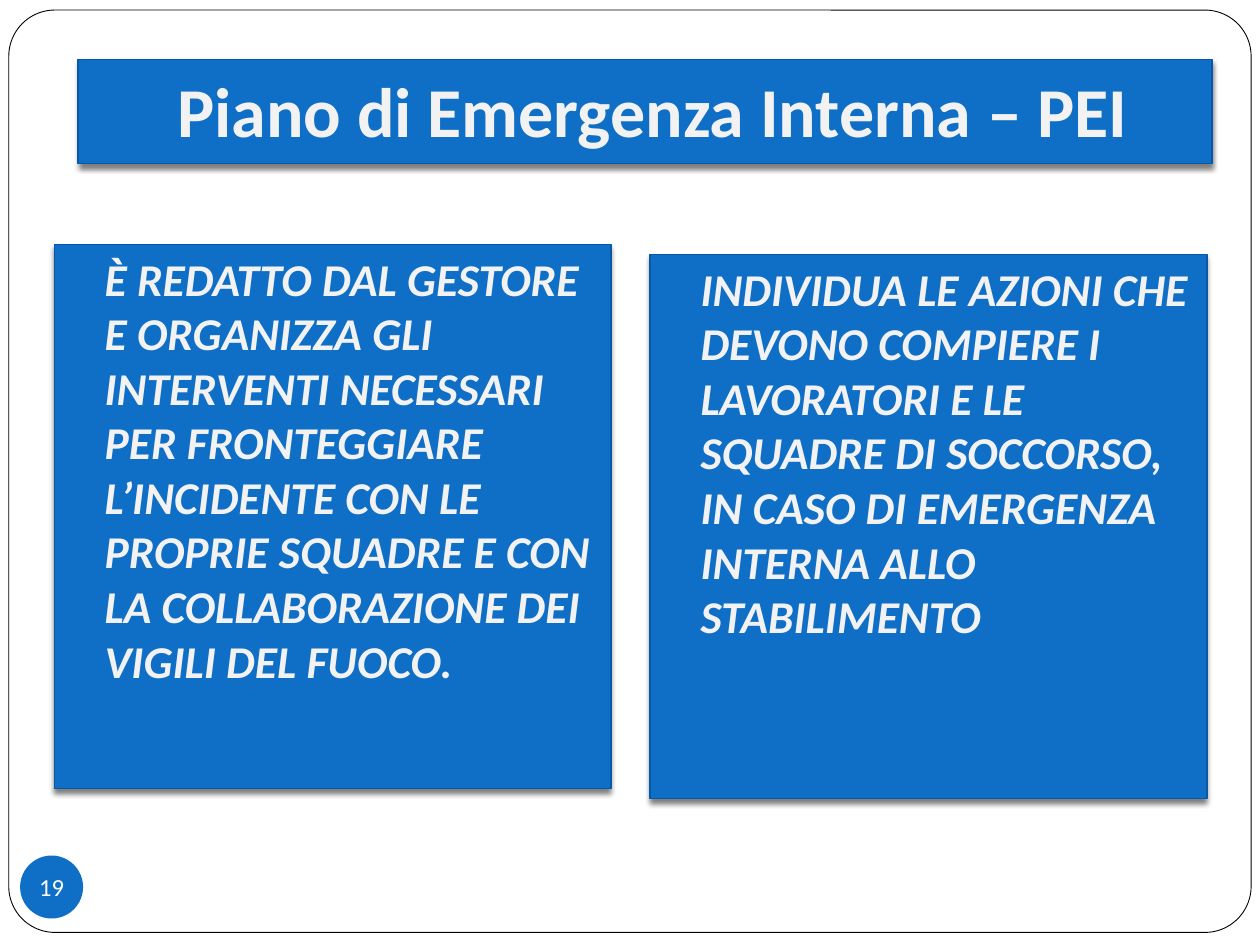
from lxml import etree
from pptx import Presentation
from pptx.dml.color import RGBColor
from pptx.enum.shapes import MSO_SHAPE
from pptx.enum.text import MSO_ANCHOR, PP_ALIGN
from pptx.oxml.ns import qn
from pptx.util import Inches, Pt

RECTANGLE, ROUNDED, OVAL = MSO_SHAPE.RECTANGLE, MSO_SHAPE.ROUNDED_RECTANGLE, MSO_SHAPE.OVAL
TOP, MIDDLE, BOTTOM = MSO_ANCHOR.TOP, MSO_ANCHOR.MIDDLE, MSO_ANCHOR.BOTTOM
LEFT, CENTER = PP_ALIGN.LEFT, PP_ALIGN.CENTER
COLORS = {name: RGBColor.from_string(value) for name, value in {
    "paper": "FFFFFF", "frame": "000000", "panel": "0F6FC6",
    "edge": "0559A6", "text": "F2F2F2", "number": "FFFFFF"}.items()}

prs = Presentation()
prs.slide_width, prs.slide_height = Inches(10), Inches(7.5)
slide = prs.slides.add_slide(prs.slide_layouts[6])


def add_block(preset, box, fill, edge=None, width=0.75, shadow=False):
    block = slide.shapes.add_shape(preset, *map(Inches, box))
    block.fill.solid()
    block.fill.fore_color.rgb = COLORS[fill]
    if edge:
        block.line.color.rgb = COLORS[edge]
        block.line.width = Pt(width)
    else:
        block.line.fill.background()
    block.shadow.inherit = False
    if shadow:
        effects = block._element.spPr.find(qn("a:effectLst"))
        outer = etree.SubElement(effects, qn("a:outerShdw"), blurRad=str(Pt(3)),
                                 dist=str(Pt(2)), dir="5400000", rotWithShape="0")
        tint = etree.SubElement(outer, qn("a:srgbClr"), val=str(COLORS["frame"]))
        etree.SubElement(tint, qn("a:alpha"), val="50000")
    return block


def write(block, text, size, color, anchor, align, insets, bold=False, italic=False, wrap=True):
    """Fill a block with one paragraph; insets are left, top, right, bottom in inches."""
    frame = block.text_frame
    frame.word_wrap = wrap
    frame.vertical_anchor = anchor
    (frame.margin_left, frame.margin_top,
     frame.margin_right, frame.margin_bottom) = map(Inches, insets)
    paragraph = frame.paragraphs[0]
    paragraph.text = text
    paragraph.alignment = align
    font = paragraph.font
    font.name, font.size, font.bold, font.italic = "Calibri", Pt(size), bold, italic
    font.color.rgb = COLORS[color]


border = add_block(ROUNDED, (0.07, 0.08, 9.86, 7.32), "paper", "frame", 0.5)
border.adjustments[0] = 0.05

title = add_block(RECTANGLE, (0.62, 0.47, 9, 0.83), "panel", "edge", shadow=True)
write(title, "Piano di Emergenza Interna – PEI", 40, "text", BOTTOM, CENTER,
      (0.22, 0.05, 0.1, 0.1), bold=True)

page_number = add_block(OVAL, (0.16, 6.79, 0.5, 0.5), "panel")
write(page_number, "19", 14, "number", MIDDLE, CENTER, (0, 0, 0, 0), wrap=False)

panels = [
    (0.43, 1.94, "È REDATTO DAL GESTORE E ORGANIZZA GLI INTERVENTI NECESSARI PER "
                 "FRONTEGGIARE L’INCIDENTE CON LE PROPRIE SQUADRE E CON LA "
                 "COLLABORAZIONE DEI VIGILI DEL FUOCO."),
    (5.16, 2.02, "INDIVIDUA LE AZIONI CHE DEVONO COMPIERE I LAVORATORI E LE SQUADRE "
                 "DI SOCCORSO, IN CASO DI EMERGENZA INTERNA ALLO STABILIMENTO"),
]
for left, top, text in panels:
    panel = add_block(RECTANGLE, (left, top, 4.42, 4.32), "panel", "edge", shadow=True)
    write(panel, text, 26, "text", TOP, LEFT, (0.4, 0.05, 0.1, 0.05), bold=True, italic=True)

prs.save("out.pptx")
